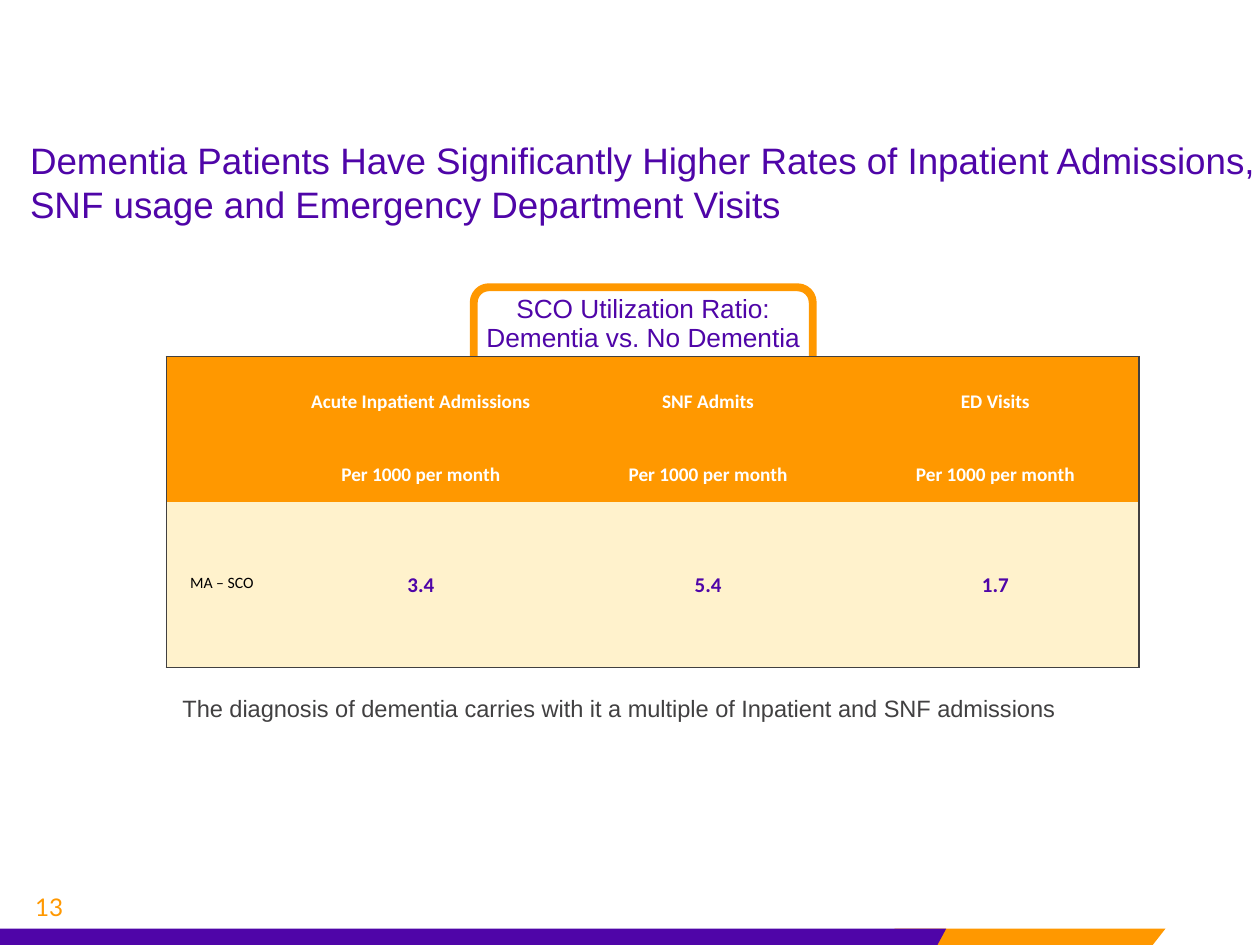
"""Build the slide on dementia patients' utilization ratios."""
from lxml.etree import SubElement
from pptx import Presentation
from pptx.dml.color import RGBColor
from pptx.enum.shapes import MSO_SHAPE
from pptx.enum.text import MSO_ANCHOR, PP_ALIGN
from pptx.oxml.ns import qn
from pptx.util import Inches, Pt

PURPLE, ORANGE, CREAM = "4F05A8", "FF9800", "FFF2CC"
GRAY, WHITE, BLACK = "414041", "FFFFFF", "000000"


def paint(color_format, color):
    color_format.rgb = RGBColor.from_string(color)


class SlideBuilder:
    def __init__(self, slide, font="Arial"):
        self.slide = slide
        self.font = font

    def style(self, paragraph, size, color, font=None, bold=False, align=None, spacing=None):
        paragraph.font.name = font or self.font
        paragraph.font.size = Pt(size)
        paragraph.font.bold = bold
        paint(paragraph.font.color, color)
        paragraph.alignment = align
        paragraph.line_spacing = spacing

    def finish(self, shape, fill, line=None, width=0):
        shape.shadow.inherit = False
        shape.fill.solid()
        paint(shape.fill.fore_color, fill)
        if line:
            paint(shape.line.color, line)
            shape.line.width = Pt(width)
        else:
            shape.line.fill.background()

    def preset(self, kind, box, fill, line=None, width=0, adjust=None):
        shape = self.slide.shapes.add_shape(kind, *map(Inches, box))
        if adjust is not None:
            shape.adjustments[0] = adjust
        self.finish(shape, fill, line, width)

    def polygon(self, points, fill):
        start, *rest = [(Inches(x), Inches(y)) for x, y in points]
        outline = self.slide.shapes.build_freeform(*start)
        outline.add_line_segments(rest)
        self.finish(outline.convert_to_shape(), fill)

    def text(self, box, words, size, color, inset=None, **style):
        frame = self.slide.shapes.add_textbox(*map(Inches, box)).text_frame
        frame.word_wrap = True
        if inset is not None:
            frame.margin_left = frame.margin_right = Inches(inset)
            frame.margin_top = frame.margin_bottom = Inches(inset)
        paragraph = frame.paragraphs[0]
        paragraph.text = words
        self.style(paragraph, size, color, **style)

    def table(self, box, widths, heights, merges):
        grid = self.slide.shapes.add_table(
            len(heights), len(widths), *map(Inches, box)).table
        for column, width in zip(grid.columns, widths):
            column.width = Inches(width)
        for row, height in zip(grid.rows, heights):
            row.height = Inches(height)
        for first, last in merges:
            grid.cell(*first).merge(grid.cell(*last))
        return grid

    def cell(self, cell, fill, edges, words="", size=11, color=WHITE, bold=True, bottom=0.04):
        cell.fill.solid()
        paint(cell.fill.fore_color, fill)
        self.borders(cell, edges)
        if words:
            cell.vertical_anchor = MSO_ANCHOR.MIDDLE
            cell.margin_left = cell.margin_right = cell.margin_top = Inches(0.01)
            cell.margin_bottom = Inches(bottom)
            cell.text = words
            self.style(cell.text_frame.paragraphs[0], size, color, "Calibri", bold, PP_ALIGN.CENTER)

    def borders(self, cell, edges):
        properties = cell._tc.get_or_add_tcPr()
        for position, edge in enumerate("LRTB"):
            line = SubElement(properties, qn(f"a:ln{edge}"), w=str(Pt(1)))
            if edge in edges:
                solid = SubElement(line, qn("a:solidFill"))
                SubElement(solid, qn("a:srgbClr"), val=GRAY)
            else:
                SubElement(line, qn("a:noFill"))
            properties.insert(position, line)


def add_ratio_table(builder):
    heights = [0.75, 0.22] + [0.44] * 3
    widths = [0.88] + [2.28] * 3
    measures = ["Acute Inpatient Admissions", "SNF Admits", "ED Visits"]
    ratios = ["3.4", "5.4", "1.7"]
    last_row, last_column = len(heights) - 1, len(widths) - 1
    merges = [((0, 0), (1, 0))]
    merges += [((2, column), (last_row, column)) for column in range(1, len(widths))]
    contents = {(3, 0): dict(words="MA – SCO", size=9, color=BLACK, bold=False)}
    for column, (measure, ratio) in enumerate(zip(measures, ratios), 1):
        contents[0, column] = dict(words=measure)
        contents[1, column] = dict(words="Per 1000 per month")
        contents[2, column] = dict(words=ratio, size=12, color=PURPLE, bottom=0)

    grid = builder.table((1.32, 2.83, 7.73, 2.31), widths, heights, merges)
    for row in range(len(heights)):
        for column in range(len(widths)):
            cell = grid.cell(row, column)
            sides = {
                "L": column == 0,
                "R": column == last_column,
                "T": row == 0,
                "B": row + cell.span_height > last_row,
            }
            edges = [side for side, outer in sides.items() if outer]
            fill = ORANGE if row < 2 else CREAM
            builder.cell(cell, fill, edges, **contents.get((row, column), {}))


def main():
    deck = Presentation()
    deck.slide_width, deck.slide_height = Inches(10), Inches(7.5)
    builder = SlideBuilder(deck.slides.add_slide(deck.slide_layouts[6]))

    builder.preset(MSO_SHAPE.PARALLELOGRAM, (7, 7.37, 2.25, 0.13), ORANGE, adjust=0.776)
    builder.polygon([(0, 7.37), (7.51, 7.37), (7.44, 7.5), (0, 7.5)], PURPLE)
    builder.preset(MSO_SHAPE.ROUNDED_RECTANGLE, (3.76, 2.28, 2.69, 0.72), WHITE, ORANGE, 4.5)
    builder.text((1.99, 2.35, 6.23, 0.65), "SCO Utilization Ratio:\vDementia vs. No Dementia",
                 15, PURPLE, inset=0, align=PP_ALIGN.CENTER, spacing=0.9)
    add_ratio_table(builder)
    builder.text((1.35, 5.46, 7.17, 0.33),
                 "The diagnosis of dementia carries with it a multiple of Inpatient and SNF admissions",
                 13.5, GRAY)
    builder.text((0.14, 1.04, 9.93, 0.81),
                 "Dementia Patients Have Significantly Higher Rates of Inpatient Admissions, "
                 "SNF usage and Emergency Department Visits", 21, PURPLE)
    builder.text((0.18, 7.08, 2.33, 0.3), "13", 13.9, ORANGE, font="Lato", spacing=0.8)
    deck.save("out.pptx")


if __name__ == "__main__":
    main()
